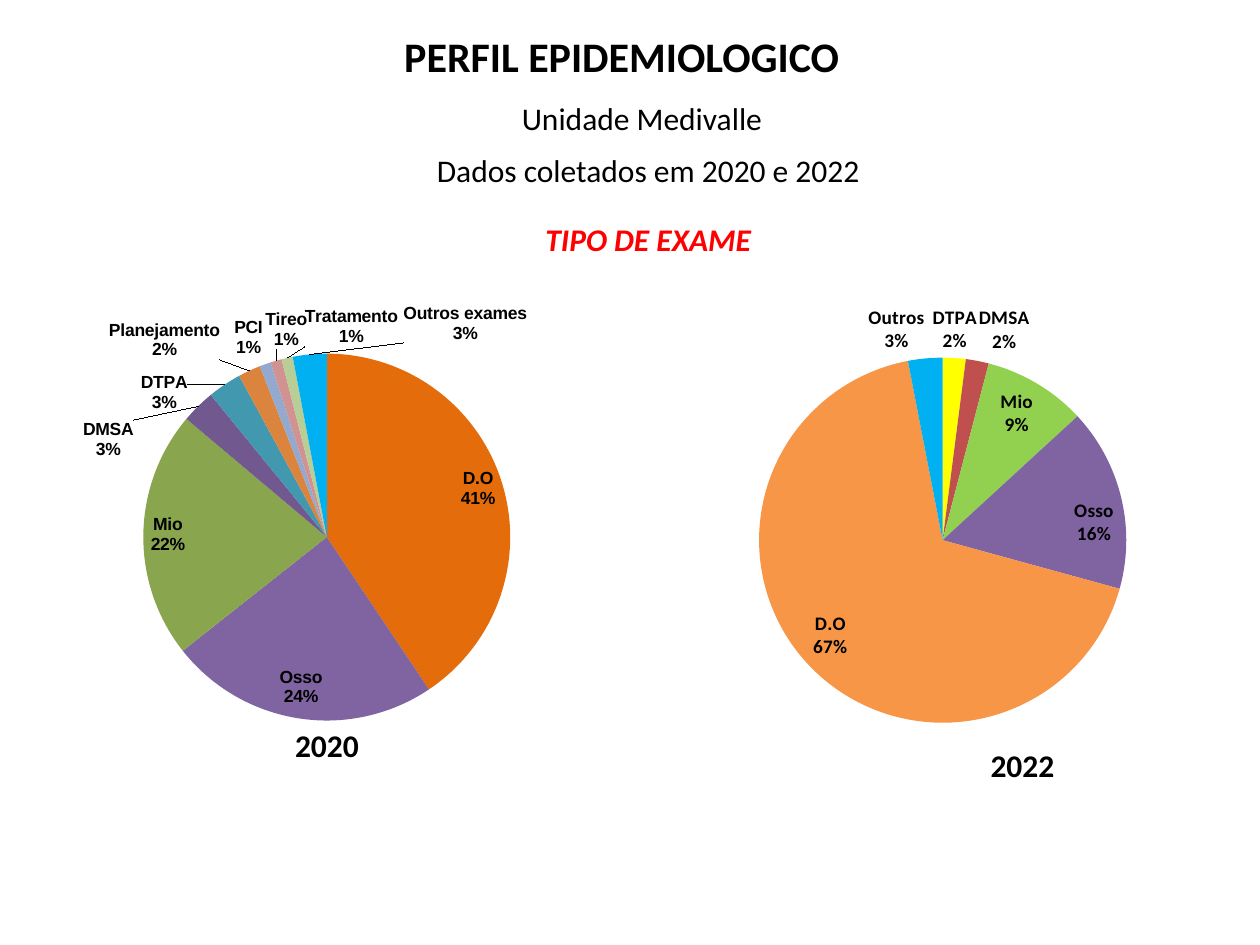
import pptx
import pptx.chart.data
import pptx.dml.color
import pptx.enum.chart
import pptx.enum.text
import pptx.oxml
import pptx.oxml.ns
import pptx.util

Inches = pptx.util.Inches
Spot = pptx.enum.chart.XL_LABEL_POSITION
PERCENT = '0"%"'


def tint(code):
    return pptx.dml.color.RGBColor.from_string(code)


def style(font, size, face="Calibri", color="000000", bold=False, slant=False):
    font.size = pptx.util.Pt(size)
    font.name = face
    font.color.rgb = tint(color)
    font.bold = bold
    font.italic = slant


def write(slide, box, text, **look):
    frame = slide.shapes.add_textbox(*map(Inches, box)).text_frame
    frame.word_wrap = False
    para = frame.paragraphs[0]
    para.alignment = pptx.enum.text.PP_ALIGN.CENTER
    run = para.add_run()
    run.text = text
    style(run.font, **look)


def layout(parent, index, **values):
    node = pptx.oxml.parse_xml(
        f'<c:layout {pptx.oxml.ns.nsdecls("c")}><c:manualLayout/></c:layout>')
    for tag, value in values.items():
        item = node[0].makeelement(pptx.oxml.ns.qn(f"c:{tag}"), {"val": str(value)})
        node[0].append(item)
    for old in parent.xpath("c:layout"):
        parent.remove(old)
    parent.insert(index, node)


def split(node):
    for old in node.xpath("c:separator"):
        node.remove(old)
    mark = node.makeelement(pptx.oxml.ns.qn("c:separator"), {})
    mark.text = "\n"
    last = node.xpath("c:showBubbleSize | c:showPercent")[-1]
    last.addnext(mark)


def label(series, index, inside, shift, size, face, fmt):
    tag = series.points[index].data_label
    style(tag.font, size, face, bold=True)
    tag.position = Spot.INSIDE_END if inside else Spot.OUTSIDE_END
    node = series.data_labels._element.xpath(f'c:dLbl[c:idx/@val="{index}"]')[0]
    flags = {"showVal": bool(fmt), "showCatName": True, "showPercent": not fmt}
    for name, on in flags.items():
        node.xpath(f"c:{name}")[0].set("val", str(int(on)))
    split(node)
    if fmt:
        form = node.makeelement(pptx.oxml.ns.qn("c:numFmt"),
                                {"formatCode": fmt, "sourceLinked": "0"})
        node.insert(1, form)
    if shift:
        layout(node, 1, x=shift[0], y=shift[1])


def pie(slide, box, plot, rows, size, face, fmt=None):
    data = pptx.chart.data.CategoryChartData()
    data.categories = [row[0] for row in rows]
    data.add_series("Series 1", [row[1] for row in rows])
    chart = slide.shapes.add_chart(
        pptx.enum.chart.XL_CHART_TYPE.PIE, *map(Inches, box), data).chart
    chart.has_legend = False
    chart.has_title = False
    style(chart.font, 10)
    area = chart._chartSpace.xpath("c:chart/c:plotArea")[0]
    x, y, w, h = plot
    layout(area, 0, layoutTarget="inner", xMode="edge", yMode="edge",
           x=x, y=y, w=w, h=h)
    chart.plots[0].vary_by_categories = True
    series = chart.plots[0].series[0]
    tags = series.data_labels
    style(tags.font, size, face, bold=True)
    tags.show_category_name = True
    tags.show_value = bool(fmt)
    tags.show_percentage = not fmt
    split(tags._element)
    if fmt:
        tags.number_format = fmt
        tags.number_format_is_linked = False
    for index, (name, value, color, shift) in enumerate(rows):
        fill = series.points[index].format.fill
        fill.solid()
        fill.fore_color.rgb = tint(color)
        label(series, index, value > 5, shift, size, face, fmt)


def header(slide, box):
    x, y, w, h = box
    write(slide, (x, y, w, 0.5), "PERFIL EPIDEMIOLOGICO", size=24, bold=True)
    write(slide, (x + 0.16, y + 0.55, w, 0.4), "Unidade Medivalle", size=18)
    write(slide, (x + 0.21, y + 0.96, w, 0.4),
          "Dados coletados em 2020 e 2022", size=18)
    write(slide, (x + 0.21, y + 1.51, w, 0.4), "TIPO DE EXAME",
          size=18, color="FF0000", bold=True, slant=True)


def panel(slide, box, year, place, **parts):
    x, y, w, h = box
    pie(slide, box, **parts)
    write(slide, (x + place[0], y + place[1], 0.71, 0.4), year, size=18, bold=True)


def main():
    deck = pptx.Presentation()
    deck.slide_width, deck.slide_height = Inches(10), Inches(7.5)
    slide = deck.slides.add_slide(deck.slide_layouts[6])
    header(slide, (3.09, 0.19, 3.69, 1.91))
    first = [
        ("D.O", 41, "E46C0A", (0, -0.04)),
        ("Osso", 24, "8064A2", (-0.03, -0.01)),
        ("Mio", 22, "89A54E", None),
        ("DMSA", 3, "71588F", (-0.09, 0.14)),
        ("DTPA", 3, "4198AF", (-0.05, 0.08)),
        ("Planejamento", 2, "DB843D", (-0.04, -0.01)),
        ("PCI", 1, "93A9CF", None),
        ("Tireo", 1, "D19392", (0.05, -0.01)),
        ("Tratamento", 1, "B9CD96", (0.17, -0.01)),
        ("Outros exames", 3, "00B0F0", (0.33, -0.01)),
    ]
    second = [
        ("DTPA", 2, "FFFF00", None),
        ("DMSA", 2, "C0504D", None),
        ("Mio", 9, "92D050", None),
        ("Osso", 16, "8064A2", None),
        ("D.O", 67, "F79646", None),
        ("Outros", 3, "00B0F0", None),
    ]
    panel(slide, (0, 2.41, 5.24, 3.31), "2020", (2.24, 3.3), rows=first,
          plot=(0.03, 0.12, 0.93, 0.88), size=10, face="Arial")
    panel(slide, (4.61, 2.41, 5.47, 3.43), "2022", (3.15, 3.46), rows=second,
          plot=(0.07, 0.12, 0.91, 0.85), size=11, face="Calibri", fmt=PERCENT)
    deck.save("out.pptx")


if __name__ == "__main__":
    main()
